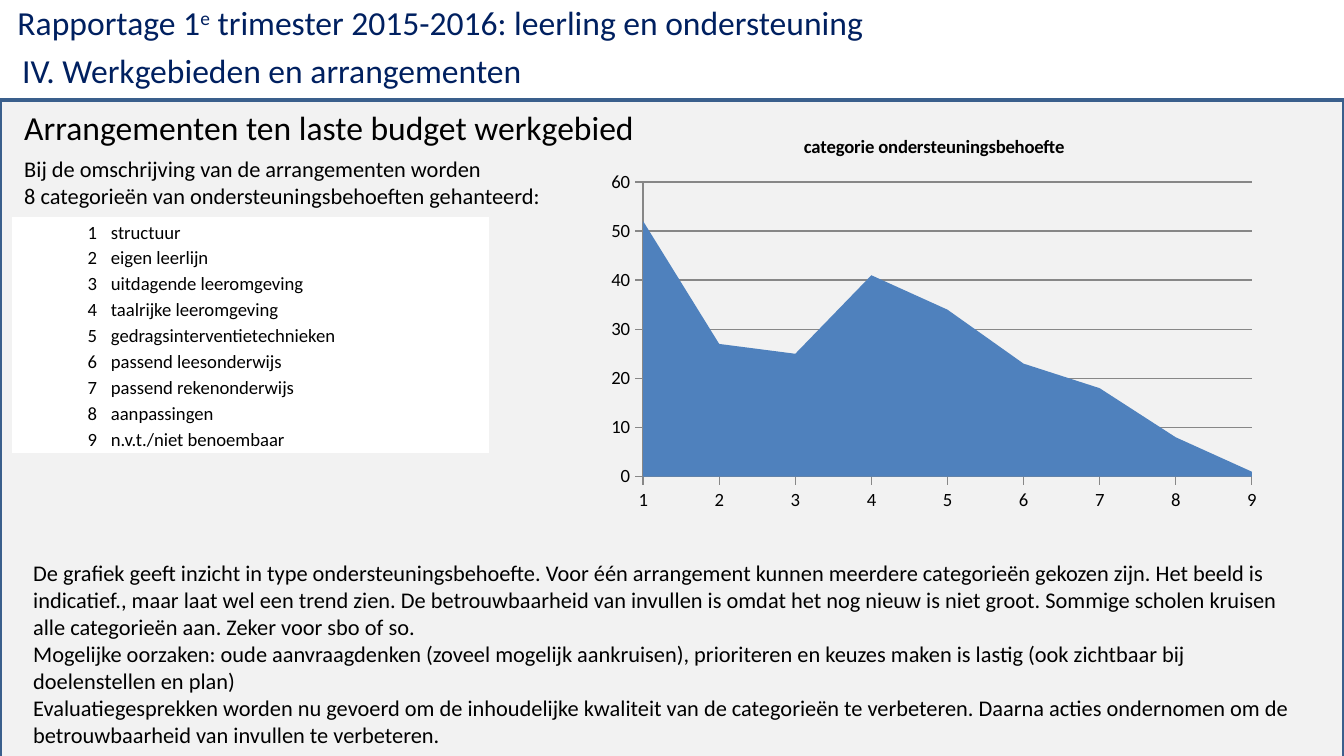
from lxml import etree
from pptx import Presentation
from pptx.chart.data import CategoryChartData
from pptx.dml.color import RGBColor
from pptx.enum.chart import XL_CHART_TYPE, XL_TICK_MARK
from pptx.enum.shapes import MSO_SHAPE
from pptx.enum.text import MSO_ANCHOR, MSO_AUTO_SIZE, PP_ALIGN
from pptx.oxml.ns import qn
from pptx.util import Pt

AREA, OUTSIDE = XL_CHART_TYPE.AREA, XL_TICK_MARK.OUTSIDE
TOP, MIDDLE, BOTTOM = MSO_ANCHOR.TOP, MSO_ANCHOR.MIDDLE, MSO_ANCHOR.BOTTOM
LEFT, RIGHT = PP_ALIGN.LEFT, PP_ALIGN.RIGHT
GROW = MSO_AUTO_SIZE.SHAPE_TO_FIT_TEXT
RECTANGLE = MSO_SHAPE.RECTANGLE
PX = 914400 / 134.4
FONT, NAVY, BLACK, WHITE = "Calibri", "002060", "000000", "FFFFFF"
PANEL, PANEL_LINE, AREA_BLUE, GRID = "F2F2F2", "3A5F8C", "4F81BD", "878787"

TITLE = [[("Rapportage 1", 0), ("e", 30000),
          (" trimester 2015-2016: leerling en ondersteuning", 0)]]
SECTION = ["IV. Werkgebieden en arrangementen"]
HEADING = ["Arrangementen ten laste budget werkgebied"]
INTRO = ["Bij de omschrijving van de arrangementen worden",
         "8 categorieën van ondersteuningsbehoeften gehanteerd:"]
CATEGORIES = ["structuur", "eigen leerlijn", "uitdagende leeromgeving",
              "taalrijke leeromgeving", "gedragsinterventietechnieken",
              "passend leesonderwijs", "passend rekenonderwijs",
              "aanpassingen", "n.v.t./niet benoembaar"]
COLUMN_WIDTHS, ROW_HEIGHT = [91, 91, 202, 91], 26
CHART_TITLE = ["categorie ondersteuningsbehoefte"]
COUNTS = [52, 27, 25, 41, 34, 23, 18, 8, 1]
EXPLANATION = [
    "De grafiek geeft inzicht in type ondersteuningsbehoefte. Voor één arrangement kunnen "
    "meerdere categorieën gekozen zijn. Het beeld is indicatief., maar laat wel een trend zien. "
    "De betrouwbaarheid van invullen is omdat het nog nieuw is niet groot. Sommige scholen "
    "kruisen alle categorieën aan. Zeker voor sbo of so.",
    "Mogelijke oorzaken: oude aanvraagdenken (zoveel mogelijk aankruisen), prioriteren en keuzes "
    "maken is lastig (ook zichtbaar bij doelenstellen en plan)",
    "Evaluatiegesprekken worden nu gevoerd om de inhoudelijke kwaliteit van de categorieën te "
    "verbeteren. Daarna acties ondernomen om de betrouwbaarheid van invullen te verbeteren.",
]


def px(*lengths):
    return [round(length * PX) for length in lengths]


def rgb(color):
    return RGBColor.from_string(color)


def write(frame, paragraphs, size=12, color=BLACK, bold=False, align=LEFT, spacing=None):
    for index, content in enumerate(paragraphs):
        paragraph = frame.add_paragraph() if index else frame.paragraphs[0]
        paragraph.alignment = align
        paragraph.line_spacing = spacing
        for words, baseline in [(content, 0)] if isinstance(content, str) else content:
            run = paragraph.add_run()
            run.text = words
            run.font.name, run.font.size, run.font.bold = FONT, Pt(size), bold
            run.font.color.rgb = rgb(color)
            if baseline:
                run.font._element.set("baseline", str(baseline))


def add_text(slide, box, paragraphs, anchor=TOP, wrap=True, **text_format):
    frame = slide.shapes.add_textbox(*px(*box)).text_frame
    frame.word_wrap, frame.auto_size, frame.vertical_anchor = wrap, GROW, anchor
    write(frame, paragraphs, **text_format)


def add_title(slide):
    title = slide.shapes.title
    title.left, title.top, title.width, title.height = px(4, -5, 1068, 54)
    frame = title.text_frame
    frame.auto_size, frame.vertical_anchor = GROW, TOP
    write(frame, TITLE, size=18, color=NAVY)


def add_panel(slide):
    panel = slide.shapes.add_shape(RECTANGLE, *px(0, 100, 1344, 664))
    panel.shadow.inherit = False
    panel.fill.solid()
    panel.fill.fore_color.rgb = rgb(PANEL)
    panel.line.color.rgb = rgb(PANEL_LINE)
    panel.line.width = Pt(2)


def add_categories(slide):
    box = px(13, 218, sum(COLUMN_WIDTHS), ROW_HEIGHT * len(CATEGORIES))
    table = slide.shapes.add_table(len(CATEGORIES), len(COLUMN_WIDTHS), *box).table
    table.first_row = table.horz_banding = False
    for column, width in zip(table.columns, px(*COLUMN_WIDTHS)):
        column.width = width
    for index, category in enumerate(CATEGORIES):
        labels = [str(index + 1), category, "", ""]
        for column, label in enumerate(labels):
            cell = table.cell(index, column)
            cell.fill.solid()
            cell.fill.fore_color.rgb = rgb(WHITE)
            cell.vertical_anchor = BOTTOM
            cell.margin_left, cell.margin_right = px(7, 7)
            cell.margin_top = cell.margin_bottom = 0
            if label:
                write(cell.text_frame, [label], size=10, spacing=1.15,
                      align=LEFT if column else RIGHT)
            else:
                paragraph = cell.text_frame.paragraphs[0]._p
                etree.SubElement(paragraph, qn("a:endParaRPr"), sz="1000")
        if index:
            table.cell(index, 1).merge(table.cell(index, 2 if index % 2 else 3))


def add_area_chart(slide):
    data = CategoryChartData()
    data.categories = [str(number + 1) for number in range(len(COUNTS))]
    data.add_series("Series 1", COUNTS)
    chart = slide.shapes.add_chart(AREA, *px(598, 116, 672, 403), data).chart
    chart.font.name, chart.font.size = FONT, Pt(10)
    chart.font.color.rgb = rgb(BLACK)
    chart.has_legend = False
    chart.has_title = True
    write(chart.chart_title.text_frame, CHART_TITLE, size=10, bold=True, align=None)
    plot = chart.plots[0]
    plot.vary_by_categories = False
    fill = plot.series[0].format.fill
    fill.solid()
    fill.fore_color.rgb = rgb(AREA_BLUE)
    counts = chart.value_axis
    counts.minimum_scale, counts.maximum_scale, counts.major_unit = 0, 60, 10
    counts.has_major_gridlines = True
    counts._element.find(qn("c:crossBetween")).set("val", "midCat")
    for axis in (chart.category_axis, counts):
        axis.major_tick_mark = OUTSIDE
        axis.format.line.color.rgb = rgb(GRID)
    counts.major_gridlines.format.line.color.rgb = rgb(GRID)


def main():
    """Build the slide on support categories and save it."""
    deck = Presentation()
    deck.slide_width, deck.slide_height = px(1344, 756)
    slide = deck.slides.add_slide(deck.slide_layouts[5])
    add_title(slide)
    add_panel(slide)
    add_text(slide, (9, 43, 589, 54), SECTION, size=18, color=NAVY)
    add_text(slide, (11, 100, 751, 54), HEADING, size=18)
    add_categories(slide)
    add_text(slide, (11, 148, 548, 68), INTRO, anchor=MIDDLE, wrap=False)
    add_area_chart(slide)
    add_text(slide, (20, 553, 1304, 203), EXPLANATION)
    deck.save("out.pptx")


if __name__ == "__main__":
    main()
